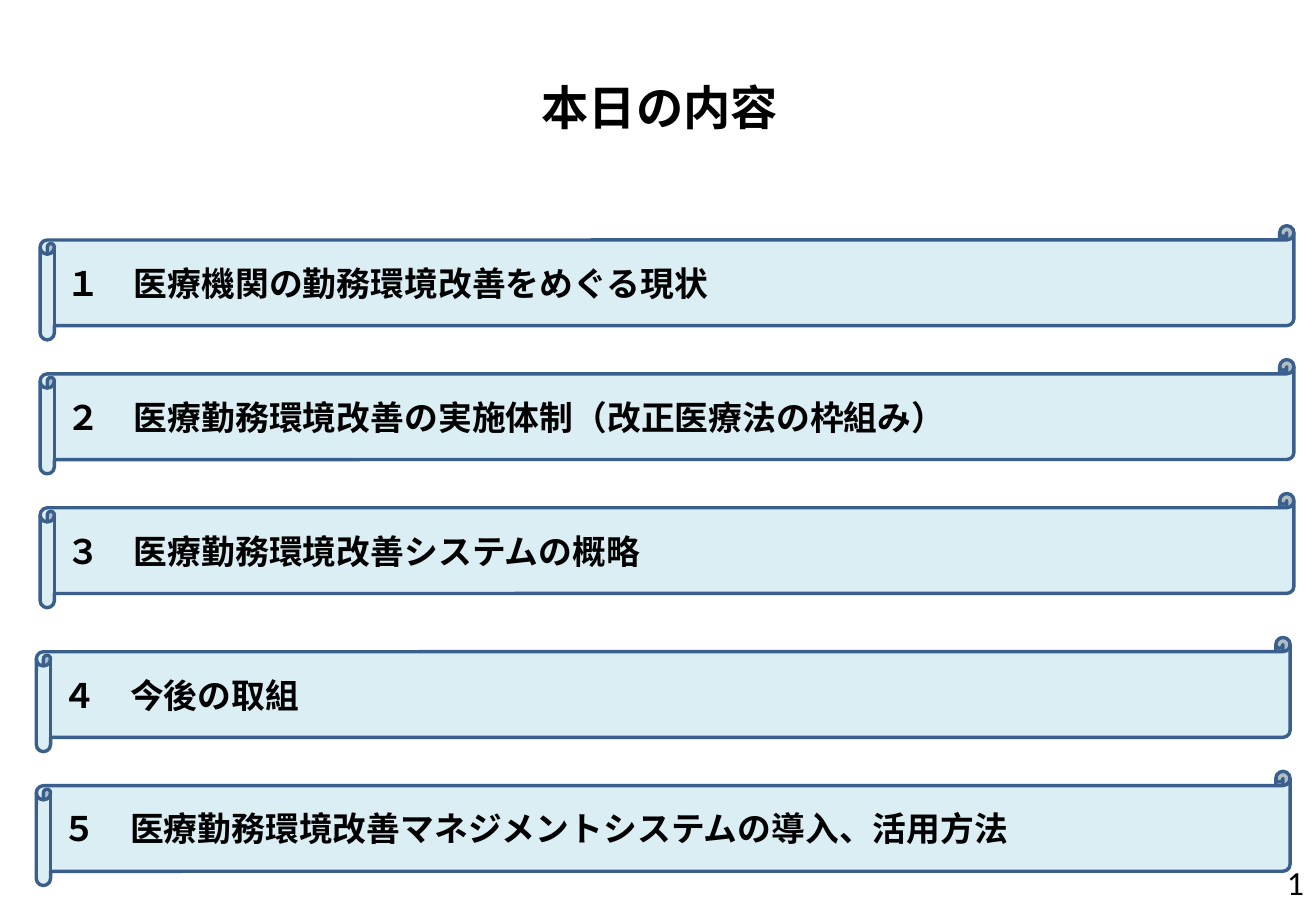
from lxml.etree import SubElement
from pptx import Presentation
from pptx.dml.color import RGBColor
from pptx.enum.shapes import MSO_SHAPE
from pptx.enum.text import MSO_ANCHOR, PP_ALIGN
from pptx.oxml.ns import qn
from pptx.util import Cm, Pt

JAPANESE_FONT = "Noto Sans CJK JP"
TOPICS = [
    (0.84, 4.72, "１　医療機関の勤務環境改善をめぐる現状"),
    (0.84, 7.52, "２　医療勤務環境改善の実施体制（改正医療法の枠組み）"),
    (0.84, 10.32, "３　医療勤務環境改善システムの概略"),
    (0.76, 13.33, "４　今後の取組"),
    (0.76, 16.13, "５　医療勤務環境改善マネジメントシステムの導入、活用方法"),
]


def color(hex_text):
    return RGBColor.from_string(hex_text)


def place(shape, left, top, width, height):
    shape.left, shape.top = Cm(left), Cm(top)
    shape.width, shape.height = Cm(width), Cm(height)


def write(shape, text, size, alignment, font=JAPANESE_FONT, bold=True):
    frame = shape.text_frame
    frame.word_wrap = True
    frame.vertical_anchor = MSO_ANCHOR.MIDDLE
    paragraph = frame.paragraphs[0]
    paragraph.alignment = alignment
    run = paragraph.add_run()
    run.text = text
    run.font.size = Pt(size)
    run.font.bold = bold
    run.font.color.rgb = color("000000")
    run.font.name = font
    SubElement(run.font._element, qn("a:ea"), typeface=font)


def add_title(slide, text):
    title = slide.shapes.title
    place(title, 0.53, 1.32, 26.52, 1.8)
    write(title, text, 28, PP_ALIGN.CENTER)


def add_scroll(slide, left, top, text):
    scroll = slide.shapes.add_shape(
        MSO_SHAPE.HORIZONTAL_SCROLL, Cm(left), Cm(top), Cm(26.21), Cm(2.39))
    scroll.shadow.inherit = False
    scroll.fill.solid()
    scroll.fill.fore_color.rgb = color("DBEEF4")
    scroll.line.color.rgb = color("3A5F8C")
    scroll.line.width = Pt(2)
    write(scroll, text, 20, PP_ALIGN.LEFT)


def add_page_number(slide, number):
    box = slide.shapes.add_textbox(Cm(21.1), Cm(17.93), Cm(6.41), Cm(1.02))
    write(box, number, 20, PP_ALIGN.RIGHT, "Calibri", False)


def main():
    presentation = Presentation()
    presentation.slide_width = Cm(27.51)
    presentation.slide_height = Cm(19.05)
    slide = presentation.slides.add_slide(presentation.slide_layouts[5])
    add_title(slide, "本日の内容")
    for left, top, text in TOPICS:
        add_scroll(slide, left, top, text)
    add_page_number(slide, "1")
    presentation.save("out.pptx")


if __name__ == "__main__":
    main()
